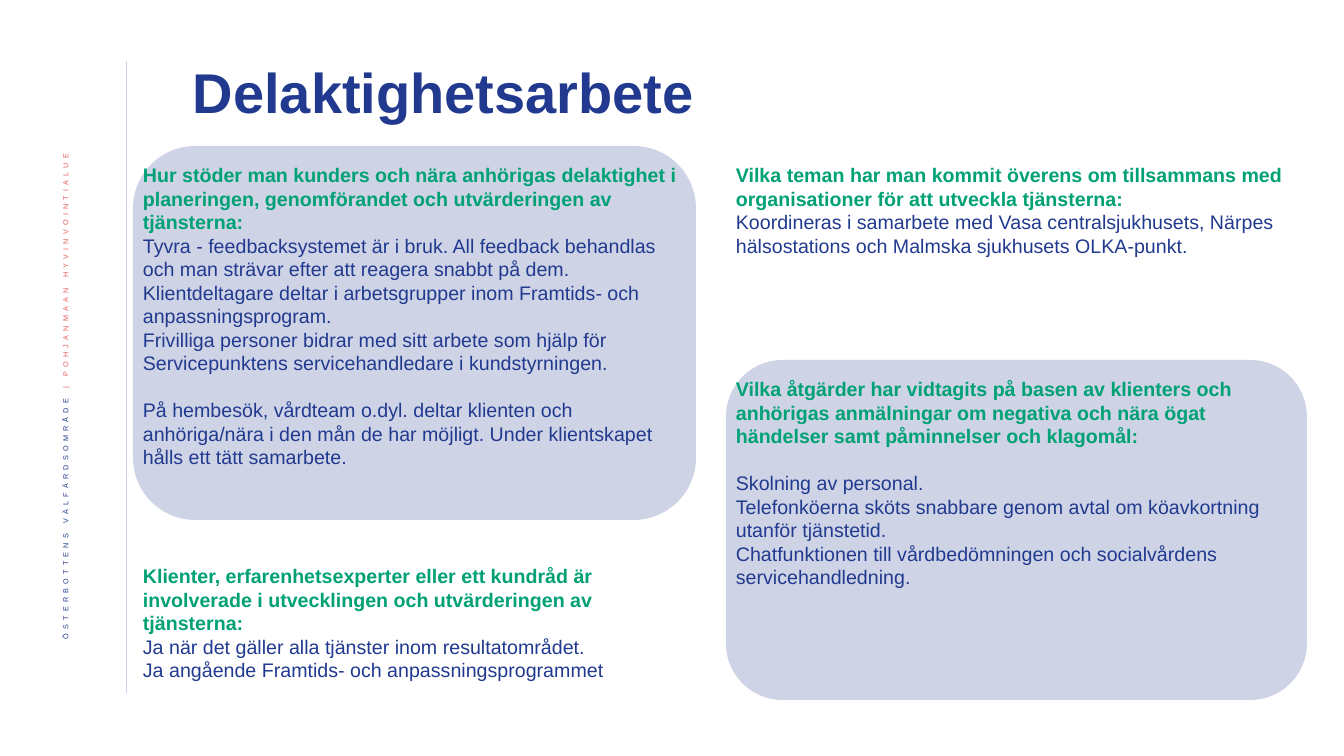
import pptx
import pptx.util
import pptx.dml.color
import pptx.enum.shapes
import pptx.enum.text
import pptx.oxml.ns
from lxml import etree

SCALE = 914400 / 100.8  # EMU in one px
NAVY, GREEN, CORAL, PALE = "213A8F", "00A174", "EB5C5F", "C9D2F2"


def color(value):
    return pptx.dml.color.RGBColor.from_string(value)


def add_text(box, paragraphs, anchor=pptx.enum.text.MSO_ANCHOR.TOP):
    """Fill a box with paragraphs, each (paragraph format, [(text, font format), ...])."""
    frame = box.text_frame
    frame.word_wrap = True
    frame.vertical_anchor = anchor
    for index, (layout, runs) in enumerate(paragraphs):
        paragraph = frame.add_paragraph() if index else frame.paragraphs[0]
        for name, value in layout.items():
            setattr(paragraph, name, value)
        for text, style in runs:
            run = paragraph.add_run()
            run.text = text
            run.font.name = "Arial"
            run.font.size = pptx.util.Pt(style["size"])
            run.font.bold = style["bold"]
            run.font.color.rgb = color(style["color"])


presentation = pptx.Presentation()
presentation.slide_width = round(1344 * SCALE)
presentation.slide_height = round(756 * SCALE)
slide = presentation.slides.add_slide(presentation.slide_layouts[6])
shapes = slide.shapes

# Vertical rule beside the margin
rule = shapes.add_connector(
    pptx.enum.shapes.MSO_CONNECTOR.STRAIGHT,
    *[round(value * SCALE) for value in (126, 61, 126, 693)])
rule.line.color.rgb = color(PALE)
rule.line.width = pptx.util.Pt(0.5)
etree.SubElement(rule._element.spPr, pptx.oxml.ns.qn("a:effectLst"))

# Organisation name, running up the margin
margin = shapes.add_textbox(*[round(value * SCALE) for value in (42, 144, 52, 578)])
add_text(margin, [
    ({"alignment": pptx.enum.text.PP_ALIGN.RIGHT, "line_spacing": 0.9},
     [("ÖSTERBOTTENS VÄLFÄRDSOMRÅDE ", {"size": 9, "bold": False, "color": NAVY}),
      ("| POHJANMAAN HYVINVOINTIALUE", {"size": 9, "bold": False, "color": CORAL})]),
], pptx.enum.text.MSO_ANCHOR.MIDDLE)
margin.text_frame._txBody.bodyPr.set("vert", "vert270")
for run in margin.text_frame.paragraphs[0].runs:
    run.font._element.set("baseline", "30000")
    run.font._element.set("spc", "300")

# Title
title = shapes.add_textbox(*[round(value * SCALE) for value in (183, 45, 1006, 100)])
add_text(title, [({"line_spacing": 0.9},
                  [("Delaktighetsarbete", {"size": 40, "bold": True, "color": NAVY})])],
         pptx.enum.text.MSO_ANCHOR.MIDDLE)

# Tinted panels
for area in [(133, 146, 563, 374), (726, 360, 581, 340)]:
    panel = shapes.add_shape(pptx.enum.shapes.MSO_SHAPE.ROUNDED_RECTANGLE,
                             *[round(value * SCALE) for value in area])
    panel.shadow.inherit = False
    panel.line.fill.background()
    panel.fill.solid()
    panel.fill.fore_color.rgb = color(NAVY)
    tint = panel._element.spPr.find(".//" + pptx.oxml.ns.qn("a:srgbClr"))
    etree.SubElement(tint, pptx.oxml.ns.qn("a:alpha"), val="22000")

# Questions and answers: area, question, answers, index of the answer after a gap
sections = [
    ((133, 158, 563, 343),
     "Hur stöder man kunders och nära anhörigas delaktighet i planeringen, "
     "genomförandet och utvärderingen av tjänsterna:",
     ["Tyvra - feedbacksystemet är i bruk. All feedback behandlas och man strävar "
      "efter att reagera snabbt på dem.",
      "Klientdeltagare deltar i arbetsgrupper inom Framtids- och anpassningsprogram.",
      "Frivilliga personer bidrar med sitt arbete som hjälp för Servicepunktens "
      "servicehandledare i kundstyrningen.",
      "På hembesök, vårdteam o.dyl. deltar klienten och anhöriga/nära i den mån de "
      "har möjligt. Under klientskapet hålls ett tätt samarbete."], 3),
    ((726, 158, 581, 105),
     "Vilka teman har man kommit överens om tillsammans med organisationer för att "
     "utveckla tjänsterna:",
     ["Koordineras i samarbete med Vasa centralsjukhusets, Närpes hälsostations och "
      "Malmska sjukhusets OLKA-punkt."], None),
    ((133, 559, 563, 129),
     "Klienter, erfarenhetsexperter eller ett kundråd är involverade i utvecklingen "
     "och utvärderingen av tjänsterna:",
     ["Ja när det gäller alla tjänster inom resultatområdet.",
      "Ja angående Framtids- och anpassningsprogrammet"], None),
    ((726, 372, 581, 248),
     "Vilka åtgärder har vidtagits på basen av klienters och anhörigas anmälningar "
     "om negativa och nära ögat händelser samt påminnelser och klagomål:",
     ["Skolning av personal.",
      "Telefonköerna sköts snabbare genom avtal om köavkortning utanför tjänstetid.",
      "Chatfunktionen till vårdbedömningen och socialvårdens servicehandledning."], 0),
]
for area, question, answers, gap_index in sections:
    box = shapes.add_textbox(*[round(value * SCALE) for value in area])
    paragraphs = [({}, [(question, {"size": 14, "bold": True, "color": GREEN})])]
    for index, answer in enumerate(answers):
        layout = {"space_before": pptx.util.Pt(16.8)} if index == gap_index else {}
        paragraphs.append((layout, [(answer, {"size": 14, "bold": False, "color": NAVY})]))
    add_text(box, paragraphs)

presentation.save("out.pptx")
